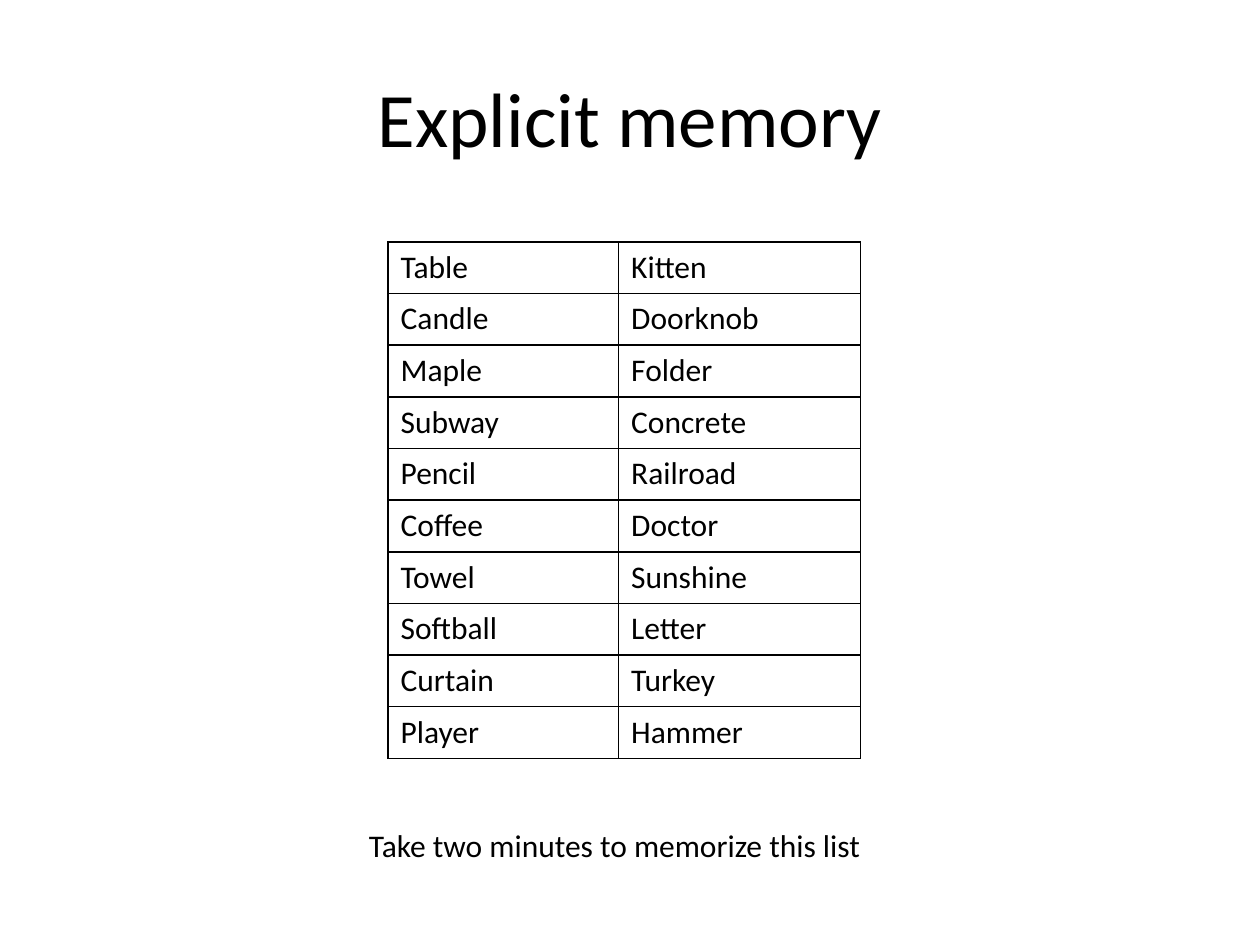
"""Build the explicit memory word-list slide."""
import dataclasses

import lxml.etree
import pptx
import pptx.dml.color
import pptx.enum.text
import pptx.oxml.ns
import pptx.util

Inches = pptx.util.Inches

WORD_PAIRS = [
    ("Table", "Kitten"),
    ("Candle", "Doorknob"),
    ("Maple", "Folder"),
    ("Subway", "Concrete"),
    ("Pencil", "Railroad"),
    ("Coffee", "Doctor"),
    ("Towel", "Sunshine"),
    ("Softball", "Letter"),
    ("Curtain", "Turkey"),
    ("Player", "Hammer"),
]


@dataclasses.dataclass(frozen=True)
class Theme:
    font: str = "Calibri"
    ink: str = "000000"
    title_size: int = 44
    body_size: int = 18
    border_width: int = 1


class PageBuilder:
    def __init__(self, page, theme):
        self.page = page
        self.theme = theme

    def add_span(self, para, text, size):
        span = para.add_run()
        span.text = text
        span.font.name = self.theme.font
        span.font.size = pptx.util.Pt(size)
        span.font.color.rgb = pptx.dml.color.RGBColor.from_string(self.theme.ink)

    def title(self, text, left, top, width, height):
        box = self.page.shapes.title
        box.left, box.top = Inches(left), Inches(top)
        box.width, box.height = Inches(width), Inches(height)
        box.text_frame.vertical_anchor = pptx.enum.text.MSO_ANCHOR.MIDDLE
        para = box.text_frame.paragraphs[0]
        para.alignment = pptx.enum.text.PP_ALIGN.CENTER
        self.add_span(para, text, self.theme.title_size)

    def text(self, text, left, top, width, height):
        box = self.page.shapes.add_textbox(
            Inches(left), Inches(top), Inches(width), Inches(height))
        frame = box.text_frame
        frame.word_wrap = True
        frame.auto_size = pptx.enum.text.MSO_AUTO_SIZE.SHAPE_TO_FIT_TEXT
        self.add_span(frame.paragraphs[0], text, self.theme.body_size)

    def border(self, cell):
        qn = pptx.oxml.ns.qn
        properties = cell._tc.get_or_add_tcPr()
        width = str(pptx.util.Pt(self.theme.border_width))
        for position, side in enumerate(("a:lnL", "a:lnR", "a:lnT", "a:lnB")):
            line = lxml.etree.Element(qn(side), w=width)
            fill = lxml.etree.SubElement(line, qn("a:solidFill"))
            lxml.etree.SubElement(fill, qn("a:srgbClr"), val=self.theme.ink)
            properties.insert(position, line)

    def table(self, rows, left, top, column_widths, row_height):
        frame = self.page.shapes.add_table(
            len(rows), len(column_widths), Inches(left), Inches(top),
            Inches(sum(column_widths)), Inches(row_height * len(rows)))
        table = frame.table
        table.first_row = False
        table.horz_banding = False
        for column, width in zip(table.columns, column_widths):
            column.width = Inches(width)
        for row, words in zip(table.rows, rows):
            row.height = Inches(row_height)
            for cell, word in zip(row.cells, words):
                cell.fill.background()
                self.border(cell)
                self.add_span(cell.text_frame.paragraphs[0], word, self.theme.body_size)


def main():
    deck = pptx.Presentation()
    deck.slide_width, deck.slide_height = Inches(10), Inches(7.5)
    page = deck.slides.add_slide(deck.slide_layouts.get_by_name("Title Only"))
    builder = PageBuilder(page, Theme())
    builder.title("Explicit memory", 0.5, 0.3, 9, 1.25)
    builder.table(WORD_PAIRS, 3.08, 1.92, (1.83, 1.92), 0.41)
    builder.text("Take two minutes to memorize this list", 2.83, 6.51, 4.5, 0.4)
    deck.save("out.pptx")


if __name__ == "__main__":
    main()
